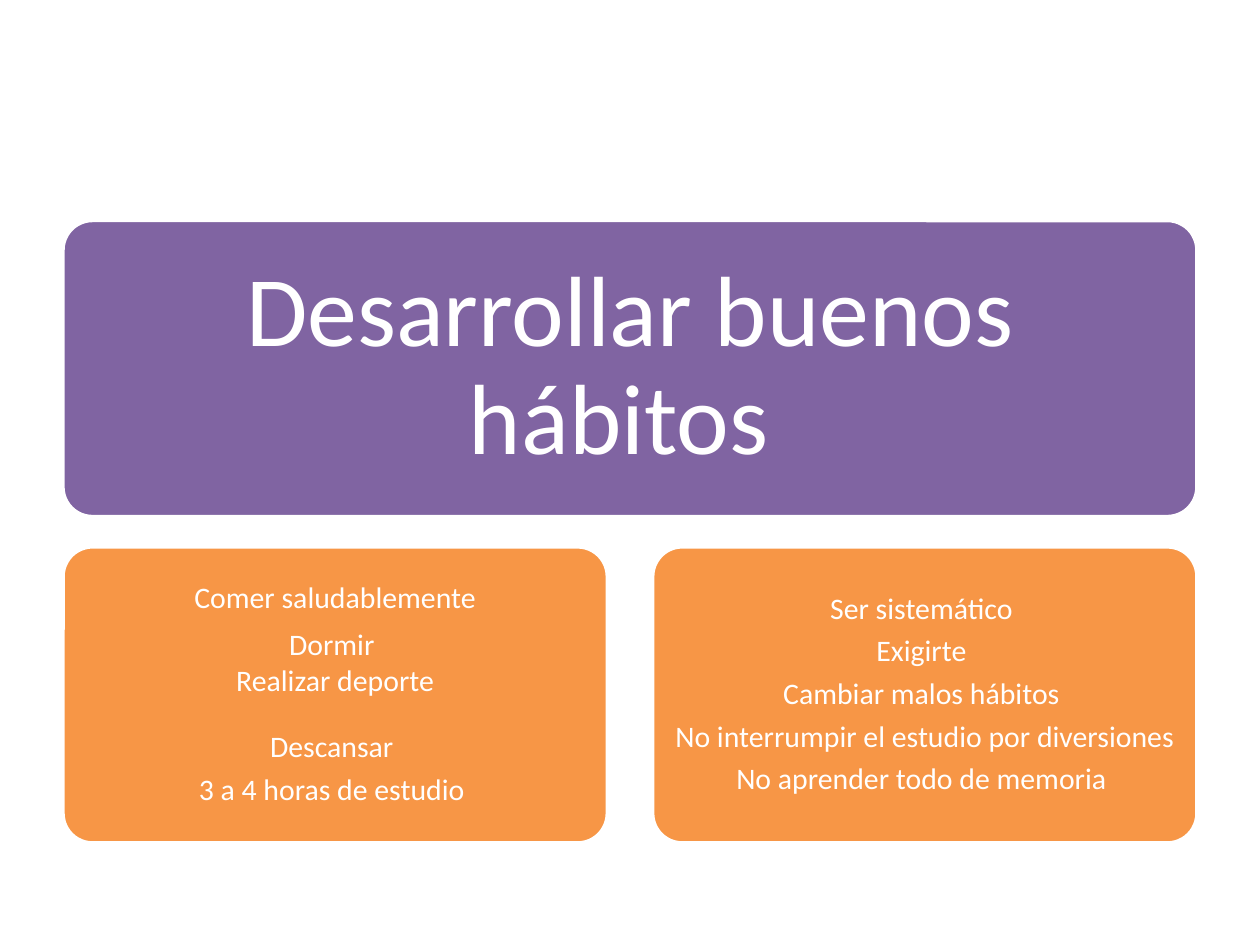
from pptx import Presentation
from pptx.dml.color import RGBColor
from pptx.enum.shapes import MSO_SHAPE as Preset
from pptx.enum.text import MSO_ANCHOR as Anchor, PP_ALIGN as Align
from pptx.util import Inches, Pt

COLORS = {"purple": "8064A2", "orange": "F79646", "white": "FFFFFF"}
FONT = "Calibri"
LEFT, TOP = 0.5, 1.75
FULL_WIDTH, HALF_WIDTH, HEIGHT = 9, 4.32, 2.35
LOWER_TOP = 4.34
RIGHT_LEFT = LEFT + FULL_WIDTH - HALF_WIDTH

# Each line: text, line spacing, points before, points after
TITLE_LINES = [("Desarrollar buenos hábitos ", 0.9, 0, 20)]
HEALTH_LINES = [
    ("Comer saludablemente", 0.9, 0, 6),
    ("Dormir ", 1.0, 0, 0),
    ("Realizar deporte", 1.0, 0, 0),
    ("Descansar ", 0.9, 20, 6),
    ("3 a 4 horas de estudio ", 0.9, 0, 6),
]
STUDY_LINES = [
    (text, 0.9, 0, 6)
    for text in (
        "Ser sistemático ",
        "Exigirte ",
        "Cambiar malos hábitos ",
        "No interrumpir el estudio por diversiones",
        "No aprender todo de memoria ",
    )
]

# Each card: left, top, width, fill, text size, inset, lines
CARDS = [
    (LEFT, TOP, FULL_WIDTH, "purple", 57, 0.24, TITLE_LINES),
    (LEFT, LOWER_TOP, HALF_WIDTH, "orange", 17, 0.07, HEALTH_LINES),
    (RIGHT_LEFT, LOWER_TOP, HALF_WIDTH, "orange", 17, 0.07, STUDY_LINES),
]

presentation = Presentation()
presentation.slide_width = Inches(10)
presentation.slide_height = Inches(7.5)
slide = presentation.slides.add_slide(presentation.slide_layouts[6])

for left, top, width, fill, size, inset, lines in CARDS:
    card = slide.shapes.add_shape(
        Preset.ROUNDED_RECTANGLE, Inches(left), Inches(top), Inches(width), Inches(HEIGHT)
    )
    card.adjustments[0] = 0.1
    card.shadow.inherit = False
    card.fill.solid()
    card.fill.fore_color.rgb = RGBColor.from_string(COLORS[fill])
    card.line.color.rgb = RGBColor.from_string(COLORS["white"])
    card.line.width = Pt(2)

    frame = card.text_frame
    frame.word_wrap = True
    frame.vertical_anchor = Anchor.MIDDLE
    frame.margin_left = frame.margin_right = Inches(inset)
    frame.margin_top = frame.margin_bottom = Inches(inset)
    for index, (text, spacing, before, after) in enumerate(lines):
        paragraph = frame.add_paragraph() if index else frame.paragraphs[0]
        paragraph.alignment = Align.CENTER
        paragraph.line_spacing = spacing
        paragraph.space_before = Pt(before)
        paragraph.space_after = Pt(after)
        run = paragraph.add_run()
        run.text = text
        run.font.name = FONT
        run.font.size = Pt(size)
        run.font.color.rgb = RGBColor.from_string(COLORS["white"])

presentation.save("out.pptx")
